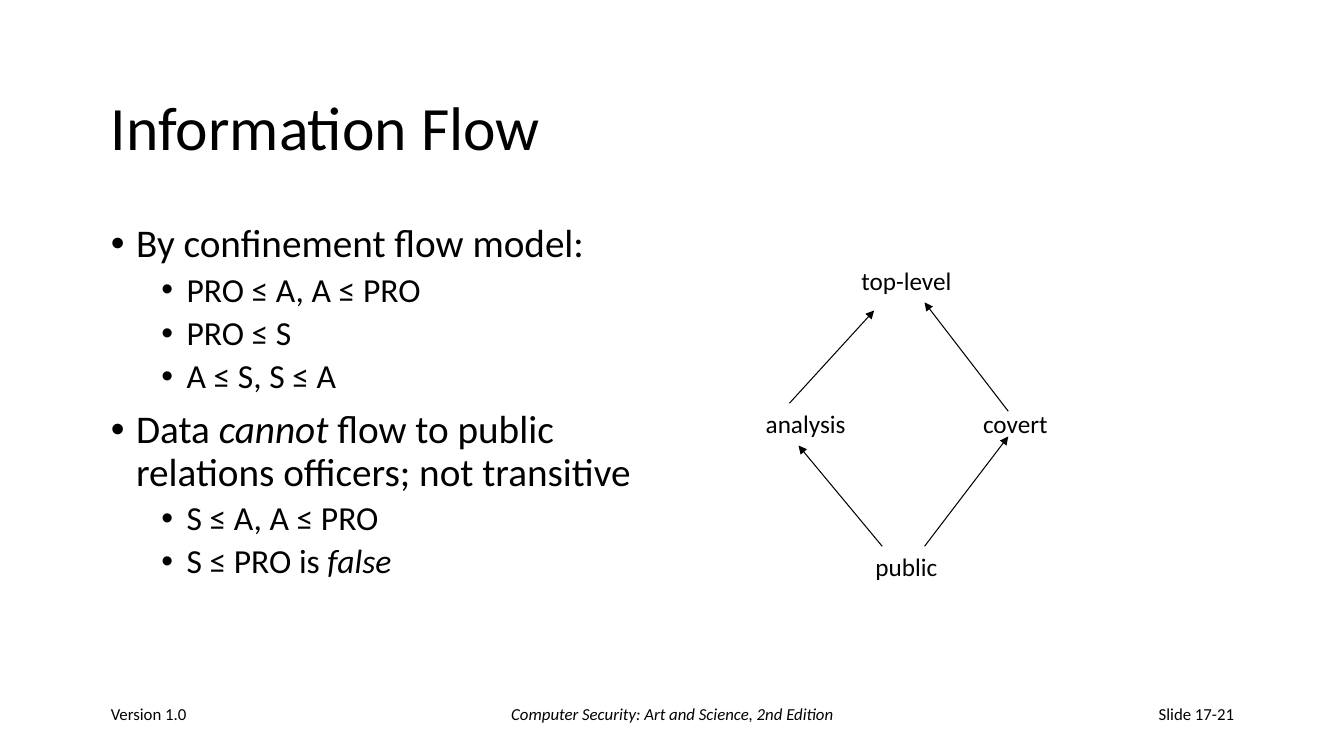
from dataclasses import dataclass

from lxml import etree
from pptx import Presentation
from pptx.dml.color import RGBColor
from pptx.enum.shapes import MSO_CONNECTOR
from pptx.enum.text import MSO_ANCHOR, MSO_AUTO_SIZE, PP_ALIGN
from pptx.oxml.ns import qn
from pptx.util import Pt

LEFT, MID, RIGHT = PP_ALIGN.LEFT, PP_ALIGN.CENTER, PP_ALIGN.RIGHT
TOP, MIDDLE = MSO_ANCHOR.TOP, MSO_ANCHOR.MIDDLE
STRAIGHT = MSO_CONNECTOR.STRAIGHT
PX = 9144  # 100 px to the inch


@dataclass(frozen=True)
class Theme:
    font: str = "Calibri"
    ink: RGBColor = RGBColor(0, 0, 0)
    title: int = 44
    levels: tuple = (28, 24)
    gaps: tuple = (10, 5)
    label: int = 18
    foot: int = 12
    line: float = 0.75


THEME = Theme()

# Asterisks mark italic words; each point is (level, text).
TITLE = "Information Flow"
POINTS = [
    (0, "By confinement flow model:"),
    (1, "PRO ≤ A, A ≤ PRO"),
    (1, "PRO ≤ S"),
    (1, "A ≤ S, S ≤ A"),
    (0, "Data *cannot* flow to public relations officers; not transitive"),
    (1, "S ≤ A, A ≤ PRO"),
    (1, "S ≤ PRO is *false*"),
]
NODES = {
    "top-level": (825, 258),
    "analysis": (725, 400),
    "covert": (933, 400),
    "public": (825, 542),
}
FLOWS = [
    ((875, 542), (792, 442)),
    ((917, 542), (1000, 433)),
    ((783, 400), (867, 308)),
    ((1000, 408), (917, 300)),
]
FOOTER = [
    ("Version 1.0", 100, 278, LEFT),
    ("*Computer Security: Art and Science, 2nd Edition*", 456, 422, MID),
    ("Slide 17-21", 956, 278, RIGHT),
]


def place(shape, box):
    shape.left, shape.top, shape.width, shape.height = (v * PX for v in box)
    return shape


def write(para, text, size, align=LEFT, spacing=None, before=None):
    """Fill a paragraph, setting the words between asterisks in italics."""
    para.alignment = align
    if spacing:
        para.line_spacing = spacing
    if before is not None:
        para.space_before = Pt(before)
    for i, part in enumerate(text.split("*")):
        if part:
            run = para.add_run()
            run.text = part
            font = run.font
            font.name, font.size, font.italic = THEME.font, Pt(size), i % 2 == 1
            font.color.rgb = THEME.ink


def frame(shape, anchor=TOP):
    text = shape.text_frame
    text.word_wrap = True
    text.auto_size = MSO_AUTO_SIZE.NONE
    text.vertical_anchor = anchor
    return text


def label(slide, text, box, size, align, anchor=TOP):
    shape = slide.shapes.add_textbox(*(v * PX for v in box))
    write(frame(shape, anchor).paragraphs[0], text, size, align)


def bullet(para, level):
    para.level = level
    props = para._p.get_or_add_pPr()
    props.set("marL", str((25 + 50 * level) * PX))
    props.set("indent", str(-25 * PX))
    etree.SubElement(props, qn("a:buFont")).set("typeface", "Arial")
    etree.SubElement(props, qn("a:buChar")).set("char", "•")


def arrow(slide, start, end):
    link = slide.shapes.add_connector(STRAIGHT, *(v * PX for v in start + end))
    link.line.color.rgb = THEME.ink
    link.line.width = Pt(THEME.line)
    etree.SubElement(link.line._get_or_add_ln(), qn("a:tailEnd")).set("type", "triangle")
    etree.SubElement(link._element.spPr, qn("a:effectLst"))


def main():
    deck = Presentation()
    deck.slide_width, deck.slide_height = 1333 * PX, 750 * PX
    slide = deck.slides.add_slide(deck.slide_layouts[1])

    title = place(slide.shapes.title, (100, 67, 1133, 125))
    write(frame(title, MIDDLE).paragraphs[0], TITLE, THEME.title, spacing=0.9)

    body = frame(place(slide.placeholders[1], (100, 217, 556, 450)))
    for i, (level, text) in enumerate(POINTS):
        para = body.add_paragraph() if i else body.paragraphs[0]
        bullet(para, level)
        write(para, text, THEME.levels[level], spacing=0.9,
              before=THEME.gaps[level] if i else 0)

    for name, (x, y) in NODES.items():
        label(slide, name, (x, y, 148, 40), THEME.label, MID)
    for start, end in FLOWS:
        arrow(slide, start, end)
    for text, x, width, align in FOOTER:
        label(slide, text, (x, 683, width, 50), THEME.foot, align, MIDDLE)

    deck.save("out.pptx")


if __name__ == "__main__":
    main()
